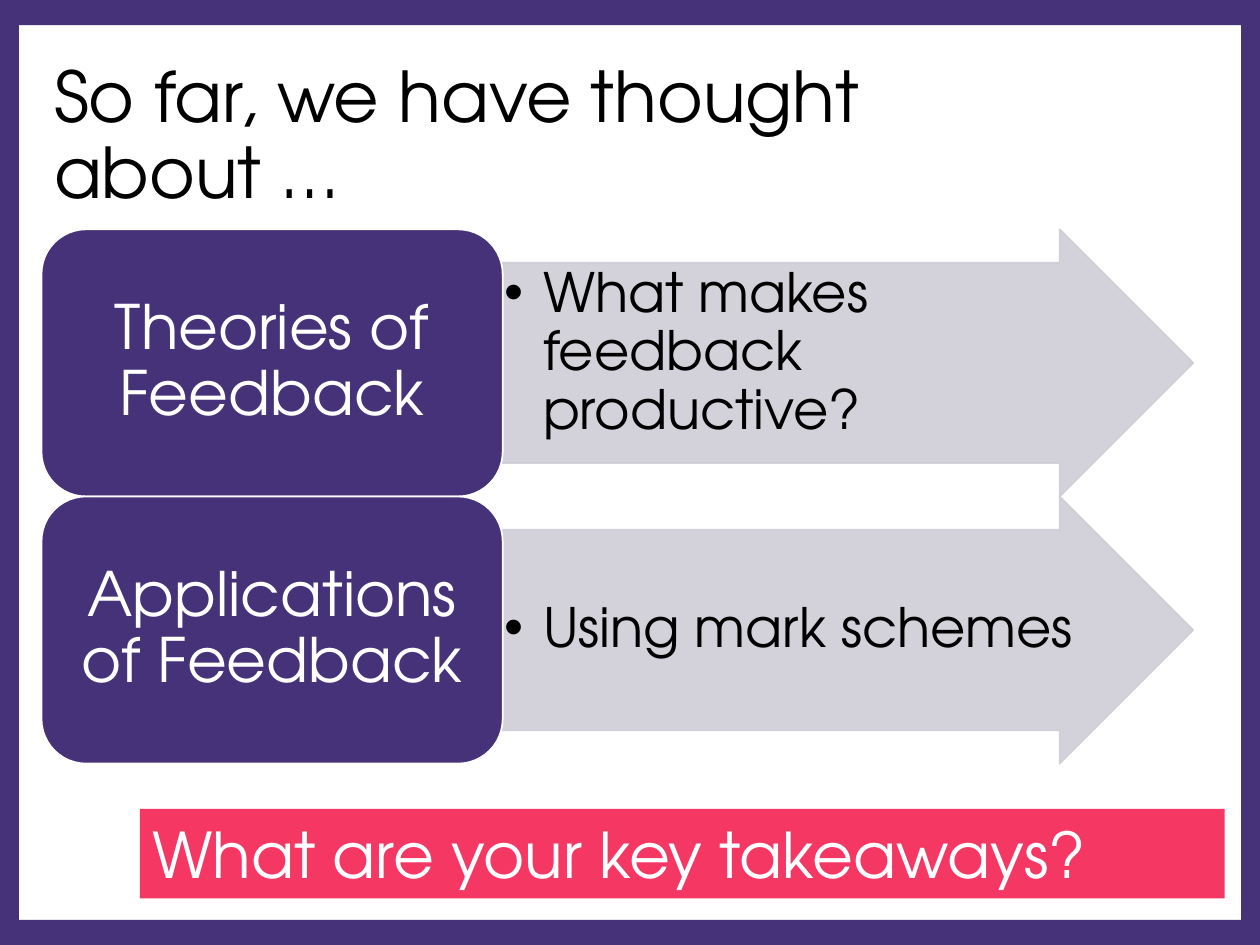
from lxml import etree
from pptx import Presentation
from pptx.dml.color import RGBColor
from pptx.enum import shapes, text
from pptx.oxml import ns
from pptx.util import Inches, Pt

PURPLE = RGBColor(0x46, 0x32, 0x78)
GREY = RGBColor(0xCF, 0xCE, 0xD6)
PINK = RGBColor(0xF5, 0x37, 0x64)
WHITE = RGBColor(0xFF, 0xFF, 0xFF)
BLACK = RGBColor(0, 0, 0)
FONT = "TeX Gyre Adventor"

TITLE = "So far, we have thought\vabout …"
TOPICS = [
    ("Theories of Feedback", "What makes feedback productive?", text.MSO_ANCHOR.TOP),
    ("Applications of Feedback", "Using mark schemes", text.MSO_ANCHOR.MIDDLE),
]
QUESTION = "What are your key takeaways?"
BORDERS = [
    (0, 0, 0.15, 7.5),
    (9.85, 0, 0.15, 7.5),
    (0.05, 0, 9.89, 0.2),
    (0.05, 7.3, 9.89, 0.2),
]
LEFT, TOP, ROW_HEIGHT = 0.33, 1.82, 2.12
LABEL_WIDTH, ARROW_WIDTH = 3.66, 5.49
ARROW_LEFT = 3.98


def place(shape, left, top, width, height):
    shape.left, shape.top = Inches(left), Inches(top)
    shape.width, shape.height = Inches(width), Inches(height)


def add_block(slide, kind, area, fill, line=None):
    block = slide.shapes.add_shape(kind, *map(Inches, area))
    block.shadow.inherit = False
    block.fill.solid()
    block.fill.fore_color.rgb = fill
    if line is None:
        block.line.fill.background()
    else:
        block.line.color.rgb = line
        block.line.width = Pt(1)
    return block


def make_translucent(shape, percent):
    for color in shape._element.spPr.iter(ns.qn("a:srgbClr")):
        etree.SubElement(color, ns.qn("a:alpha"), val=str(percent * 1000))


def add_bullet(para, indent):
    properties = para._p.get_or_add_pPr()
    properties.set("marL", str(Inches(indent)))
    properties.set("indent", str(-Inches(indent)))
    etree.SubElement(properties, ns.qn("a:buFont"), typeface="Arial")
    etree.SubElement(properties, ns.qn("a:buChar"), char="•")


def write(shape, words, size, color, align=text.PP_ALIGN.LEFT,
          anchor=text.MSO_ANCHOR.MIDDLE, insets=(0.1, 0.05), spacing=0.9, bullet=None):
    frame = shape.text_frame
    frame.text = words
    frame.word_wrap = True
    frame.auto_size = text.MSO_AUTO_SIZE.NONE
    frame.vertical_anchor = anchor
    frame.margin_left = frame.margin_right = Inches(insets[0])
    frame.margin_top = frame.margin_bottom = Inches(insets[1])
    para = frame.paragraphs[0]
    if bullet:
        add_bullet(para, bullet)
    para.alignment = align
    para.line_spacing = spacing
    for span in para.runs:
        span.font.name = FONT
        span.font.size = Pt(size)
        span.font.color.rgb = color


def add_topic(slide, row, label, point, anchor):
    top = TOP + row * ROW_HEIGHT
    arrow = add_block(slide, shapes.MSO_SHAPE.RIGHT_ARROW,
                      (ARROW_LEFT, top, ARROW_WIDTH, ROW_HEIGHT), GREY, GREY)
    arrow.adjustments[0] = 0.75
    arrow.adjustments[1] = 0.5
    make_translucent(arrow, 90)
    write(arrow, point, 31, BLACK, anchor=anchor, insets=(0.02, 0.02), bullet=0.31)
    box = add_block(slide, shapes.MSO_SHAPE.ROUNDED_RECTANGLE,
                    (LEFT, top, LABEL_WIDTH, ROW_HEIGHT), PURPLE, WHITE)
    write(box, label, 35, WHITE, align=text.PP_ALIGN.CENTER, insets=(0.15, 0.07))


def main():
    deck = Presentation()
    deck.slide_width, deck.slide_height = Inches(10), Inches(7.5)
    page = deck.slides.add_slide(deck.slide_layouts[5])
    for area in BORDERS:
        add_block(page, shapes.MSO_SHAPE.RECTANGLE, area, PURPLE)
    title = page.shapes.title
    place(title, LEFT, 0.37, 8.62, 1.45)
    write(title, TITLE, 40, BLACK)
    for row, topic in enumerate(TOPICS):
        add_topic(page, row, *topic)
    banner = add_block(page, shapes.MSO_SHAPE.RECTANGLE, (1.11, 6.42, 8.61, 0.71), PINK)
    write(banner, QUESTION, 36, WHITE, anchor=text.MSO_ANCHOR.TOP, spacing=1.0)
    deck.save("out.pptx")


if __name__ == "__main__":
    main()
